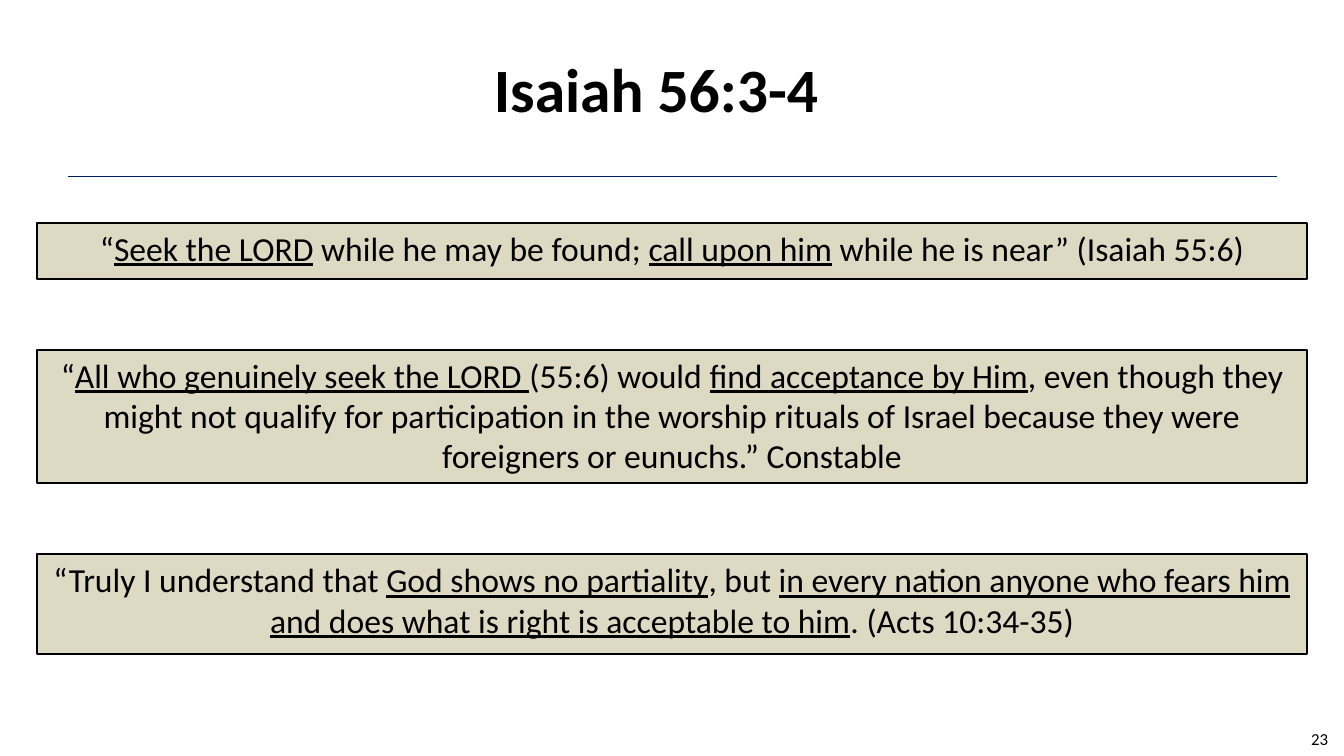
from lxml.etree import SubElement
from pptx import Presentation
from pptx.dml.color import RGBColor
from pptx.enum.shapes import MSO_CONNECTOR, MSO_SHAPE
from pptx.enum.text import MSO_ANCHOR, PP_ALIGN
from pptx.oxml.ns import qn
from pptx.util import Pt

PX = 9144
FONT = "Calibri"
COLORS = {"ink": "000000", "rule": "002060", "panel": "DDD9C3"}
QUOTES = [
    ((37, 221, 1259, 56), [
        ("“", False),
        ("Seek the LORD", True),
        (" while he may be found; ", False),
        ("call upon him", True),
        (" while he is near” (Isaiah 55:6)", False),
    ]),
    ((37, 347, 1259, 132), [
        ("“", False),
        ("All who genuinely seek the LORD ", True),
        ("(55:6) would ", False),
        ("find acceptance by Him", True),
        (", even though they might not qualify for participation in the worship "
         "rituals of Israel because they were foreigners or eunuchs.” Constable", False),
    ]),
    ((37, 550, 1259, 99), [
        ("“Truly I understand that ", False),
        ("God shows no partiality", True),
        (", but ", False),
        ("in every nation anyone who fears him and does what is right "
         "is acceptable to him", True),
        (". (Acts 10:34-35)", False),
    ]),
]


def color(name):
    """Return the named palette colour."""
    return RGBColor.from_string(COLORS[name])


def emu(box):
    """Turn px lengths into EMU."""
    return [length * PX for length in box]


def write(frame, runs, size, align, anchor, bold=False):
    """Fill a text frame with one paragraph of (text, underlined) runs."""
    frame.word_wrap = True
    frame.vertical_anchor = anchor
    frame.margin_left = frame.margin_right = 10 * PX
    frame.margin_top = frame.margin_bottom = 5 * PX
    paragraph = frame.paragraphs[0]
    paragraph.alignment = align
    for text, underlined in runs:
        run = paragraph.add_run()
        run.text = text
        run.font.name = FONT
        run.font.size = Pt(size)
        run.font.bold = bold
        run.font.underline = underlined
        run.font.color.rgb = color("ink")


def add_heading(slide, box, text):
    """Place the title in the box, with the rule below it."""
    left, top, width, height = box
    title = slide.shapes.title
    title.left, title.top, title.width, title.height = emu(box)
    write(title.text_frame, [(text, False)], 44, PP_ALIGN.CENTER, MSO_ANCHOR.MIDDLE, True)
    rule_left, rule_top = left + 16, top + height + 25
    rule = slide.shapes.add_connector(
        MSO_CONNECTOR.STRAIGHT, *emu((rule_left, rule_top, rule_left + width, rule_top)))
    rule.line.color.rgb = color("rule")
    rule.line.width = Pt(0.75)
    SubElement(rule._element.spPr, qn("a:effectLst"))


def add_quote(slide, box, runs):
    """Place one bordered quotation panel."""
    panel = slide.shapes.add_shape(MSO_SHAPE.RECTANGLE, *emu(box))
    panel.shadow.inherit = False
    panel.fill.solid()
    panel.fill.fore_color.rgb = color("panel")
    panel.line.color.rgb = color("ink")
    panel.line.width = Pt(1.5)
    write(panel.text_frame, runs, 24, PP_ALIGN.CENTER, MSO_ANCHOR.TOP)


def add_page_number(slide, box, number):
    """Place the page number at the right of its box."""
    page = slide.shapes.add_textbox(*emu(box))
    write(page.text_frame, [(number, False)], 12, PP_ALIGN.RIGHT, MSO_ANCHOR.MIDDLE)


def main():
    """Build and save the slide."""
    deck = Presentation()
    deck.slide_width, deck.slide_height = emu((1333, 750))
    slide = deck.slides.add_slide(deck.slide_layouts[5])
    add_heading(slide, (51, 25, 1200, 125), "Isaiah 56:3-4")
    for box, runs in QUOTES:
        add_quote(slide, box, runs)
    add_page_number(slide, (1227, 713, 100, 40), "23")
    deck.save("out.pptx")


if __name__ == "__main__":
    main()
